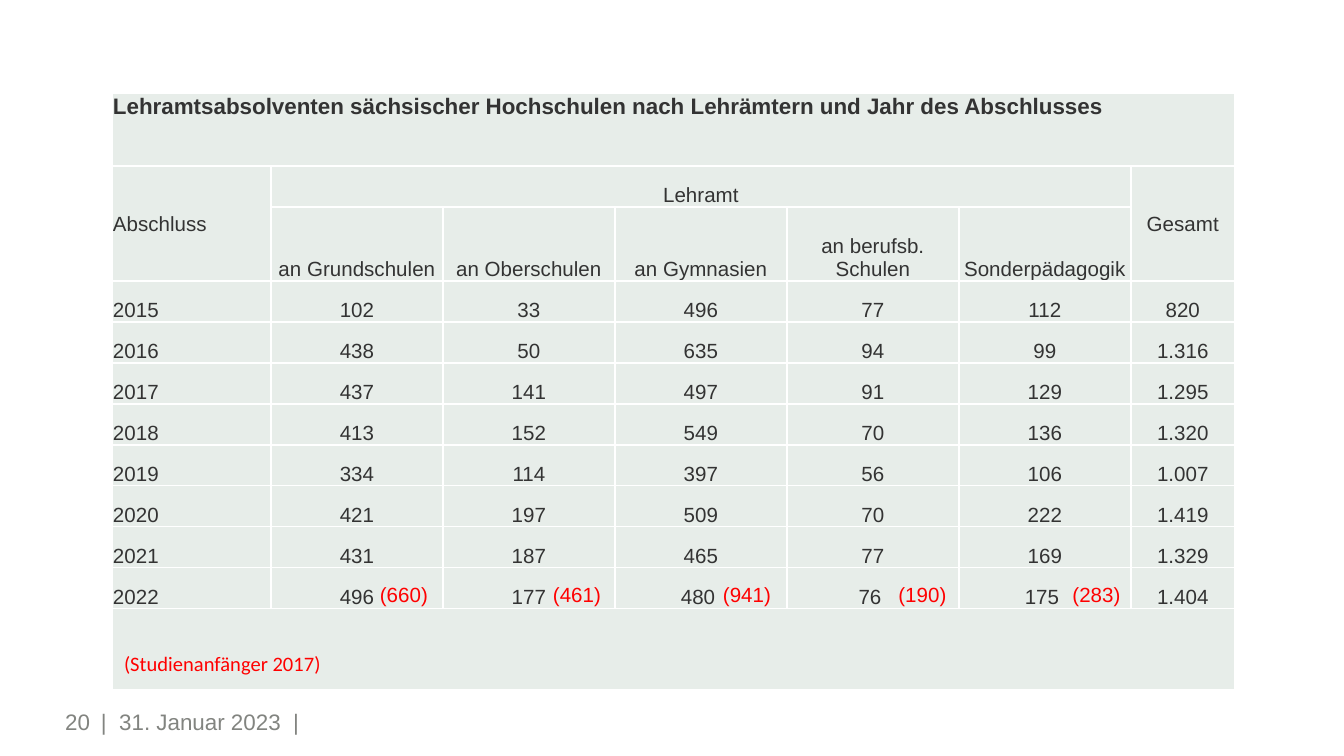
from lxml.etree import SubElement
from pptx import Presentation
from pptx.dml.color import RGBColor
from pptx.enum.text import MSO_ANCHOR, PP_ALIGN
from pptx.oxml.ns import qn
from pptx.util import Pt

# Content
TITLE = "Lehramtsabsolventen sächsischer Hochschulen nach Lehrämtern und Jahr des Abschlusses"
SCHOOL_TYPES = ["an Grundschulen", "an Oberschulen", "an Gymnasien",
                "an berufsb. Schulen", "Sonderpädagogik"]
GRADUATES = [
    ("2015", "102", "33", "496", "77", "112", "820"),
    ("2016", "438", "50", "635", "94", "99", "1.316"),
    ("2017", "437", "141", "497", "91", "129", "1.295"),
    ("2018", "413", "152", "549", "70", "136", "1.320"),
    ("2019", "334", "114", "397", "56", "106", "1.007"),
    ("2020", "421", "197", "509", "70", "222", "1.419"),
    ("2021", "431", "187", "465", "77", "169", "1.329"),
    ("2022", "496", "177", "480 ", "76 ", "175 ", "1.404"),
]
# Beginners of 2017: text, left and width in px
BEGINNERS = [("(660)", 355, 98), ("(461)", 524, 106), ("(941)", 704, 86),
             ("(190)", 880, 85), ("(283)", 1056, 81)]
BEGINNERS_NOTE = "(Studienanfänger 2017)"
PAGE_NUMBER = "20"
FOOTER_DATE = "|  31. Januar 2023  |"

# Layout in px
EMU_PER_PX = 914400 / 134.4
TABLE_LEFT, TABLE_TOP = 112, 93
COLUMN_WIDTHS = [159] + [172] * len(SCHOOL_TYPES) + [104]
ROW_HEIGHTS = [73, 41, 74] + [41] * len(GRADUATES) + [81]
FIRST_YEAR_ROW = 3

TEXT = RGBColor(0x33, 0x33, 0x33)
CELL = RGBColor(0xE7, 0xED, 0xE9)
GREY = RGBColor(0x82, 0x84, 0x80)
RED = RGBColor(0xFF, 0, 0)


def px(length):
    return round(length * EMU_PER_PX)


def format_text(frame, size, color, align, font="Arial", bold=False):
    for paragraph in frame.paragraphs:
        paragraph.alignment = align
        for run in paragraph.runs:
            run.font.size = Pt(size)
            run.font.name = font
            run.font.bold = bold
            run.font.color.rgb = color


def add_label(slide, box, text, size, color, align, font="Arial", inset=None):
    frame = slide.shapes.add_textbox(*map(px, box)).text_frame
    frame.word_wrap = True
    if inset is not None:
        frame.margin_left = frame.margin_right = px(inset)
        frame.margin_top = frame.margin_bottom = px(inset)
        frame.vertical_anchor = MSO_ANCHOR.MIDDLE
    frame.text = text
    format_text(frame, size, color, align, font)


def style_cell(cell):
    cell.margin_left = cell.margin_right = cell.margin_top = px(1)
    cell.margin_bottom = 0
    properties = cell._tc.get_or_add_tcPr()
    for side in ("lnL", "lnR", "lnT", "lnB"):
        border = SubElement(properties, qn(f"a:{side}"), w=str(Pt(1)))
        solid = SubElement(border, qn("a:solidFill"))
        SubElement(solid, qn("a:srgbClr"), val="FFFFFF")
    cell.fill.solid()
    cell.fill.fore_color.rgb = CELL


def write_cell(cell, text, anchor=MSO_ANCHOR.BOTTOM, align=PP_ALIGN.CENTER,
               size=11, bold=False):
    cell.text = text
    cell.vertical_anchor = anchor
    format_text(cell.text_frame, size, TEXT, align, bold=bold)


def add_graduates_table(slide):
    table = slide.shapes.add_table(
        len(ROW_HEIGHTS), len(COLUMN_WIDTHS), px(TABLE_LEFT), px(TABLE_TOP),
        px(sum(COLUMN_WIDTHS)), px(sum(ROW_HEIGHTS))).table
    table.first_row = table.horz_banding = False
    for column, width in zip(table.columns, COLUMN_WIDTHS):
        column.width = px(width)
    for row, height in zip(table.rows, ROW_HEIGHTS):
        row.height = px(height)
    for cell in table.iter_cells():
        style_cell(cell)

    # Merged title, header and closing cells
    last_row, last_column = len(ROW_HEIGHTS) - 1, len(COLUMN_WIDTHS) - 1
    for start, end in [((0, 0), (0, last_column)), ((1, 0), (2, 0)),
                       ((1, 1), (1, last_column - 1)),
                       ((1, last_column), (2, last_column)),
                       ((last_row, 0), (last_row, last_column))]:
        table.cell(*start).merge(table.cell(*end))

    # Title and header
    write_cell(table.cell(0, 0), TITLE, MSO_ANCHOR.TOP, PP_ALIGN.LEFT, 12, True)
    write_cell(table.cell(1, 0), "Abschluss", MSO_ANCHOR.MIDDLE, PP_ALIGN.LEFT)
    write_cell(table.cell(1, 1), "Lehramt")
    write_cell(table.cell(1, last_column), "Gesamt", MSO_ANCHOR.MIDDLE)
    for column, school_type in enumerate(SCHOOL_TYPES, 1):
        write_cell(table.cell(2, column), school_type)

    # Years
    for row, values in enumerate(GRADUATES, FIRST_YEAR_ROW):
        for column, value in enumerate(values):
            align = PP_ALIGN.CENTER if column else PP_ALIGN.LEFT
            write_cell(table.cell(row, column), value, align=align)


def main():
    presentation = Presentation()
    presentation.slide_width, presentation.slide_height = px(1344), px(756)
    slide = presentation.slides.add_slide(presentation.slide_layouts[6])

    # Footer
    add_label(slide, (101, 687, 667, 70), FOOTER_DATE, 12, GREY, PP_ALIGN.LEFT, inset=0)
    add_label(slide, (0, 687, 90, 70), PAGE_NUMBER, 12, GREY, PP_ALIGN.RIGHT, inset=0)

    add_graduates_table(slide)

    # Beginners beside the last year
    for text, left, width in BEGINNERS:
        add_label(slide, (left, 575, width, 39), text, 11, RED, PP_ALIGN.CENTER)
    add_label(slide, (101, 644, 243, 93), BEGINNERS_NOTE, 11, RED,
              PP_ALIGN.CENTER, "Calibri")

    presentation.save("out.pptx")


if __name__ == "__main__":
    main()
